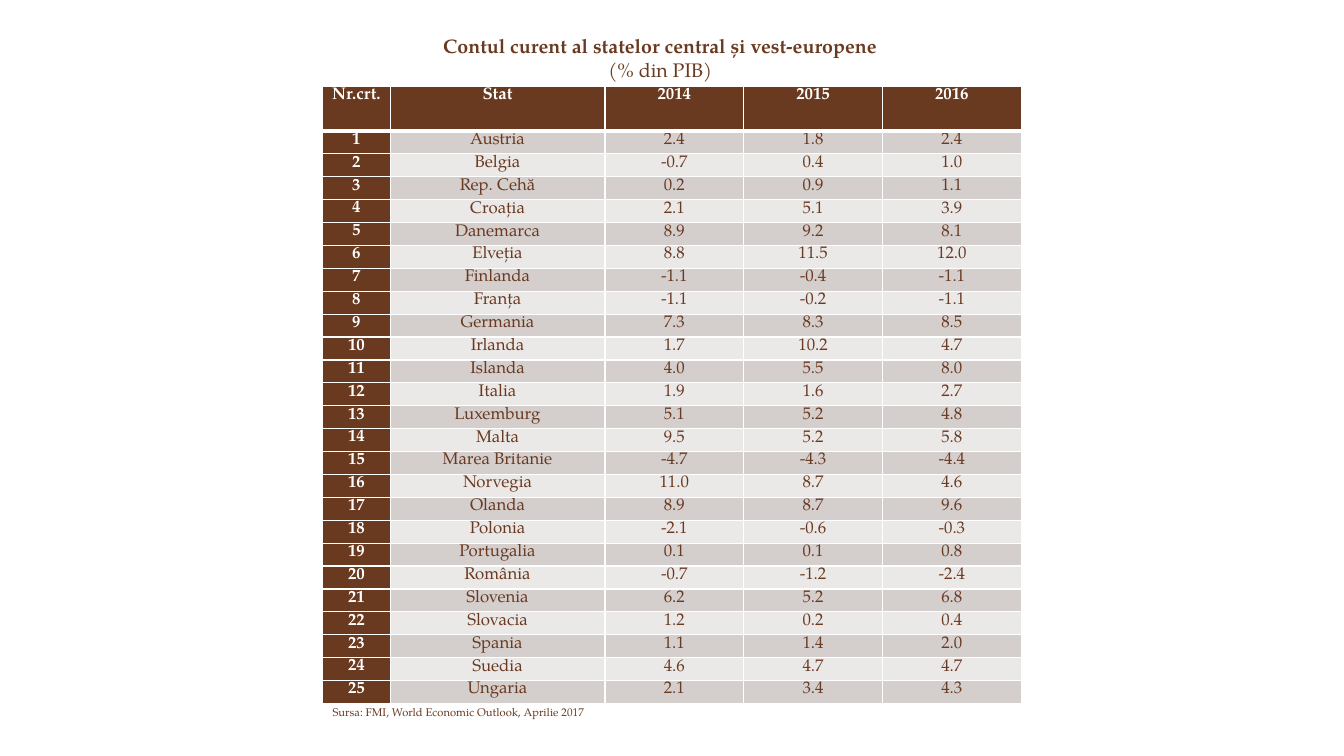
from typing import NamedTuple

from lxml.etree import SubElement
from pptx import Presentation
from pptx.dml.color import RGBColor
from pptx.enum.text import MSO_ANCHOR, MSO_AUTO_SIZE, PP_ALIGN
from pptx.oxml.ns import qn
from pptx.util import Inches, Pt

FONT = "TeX Gyre Pagella"
COLORS = {"brown": "6A3A20", "white": "FFFFFF", "dark_band": "D4CECD", "light_band": "EBE8E8"}
HEADERS = ("Nr.crt.", "Stat", "2014", "2015", "2016")
TABLE_LEFT, TABLE_TOP, TABLE_WIDTH, TABLE_HEIGHT = 3.2, 0.86, 6.93, 6.12
NUMBER_WIDTH, STATE_WIDTH = 0.67, 2.13
HEADER_HEIGHT = 0.44


class State(NamedTuple):
    name: str
    balances: tuple[float, float, float]


STATES = [
    State("Austria", (2.4, 1.8, 2.4)),
    State("Belgia", (-0.7, 0.4, 1.0)),
    State("Rep. Cehă", (0.2, 0.9, 1.1)),
    State("Croația", (2.1, 5.1, 3.9)),
    State("Danemarca", (8.9, 9.2, 8.1)),
    State("Elveția", (8.8, 11.5, 12.0)),
    State("Finlanda", (-1.1, -0.4, -1.1)),
    State("Franța", (-1.1, -0.2, -1.1)),
    State("Germania", (7.3, 8.3, 8.5)),
    State("Irlanda", (1.7, 10.2, 4.7)),
    State("Islanda", (4.0, 5.5, 8.0)),
    State("Italia", (1.9, 1.6, 2.7)),
    State("Luxemburg", (5.1, 5.2, 4.8)),
    State("Malta", (9.5, 5.2, 5.8)),
    State("Marea Britanie", (-4.7, -4.3, -4.4)),
    State("Norvegia", (11.0, 8.7, 4.6)),
    State("Olanda", (8.9, 8.7, 9.6)),
    State("Polonia", (-2.1, -0.6, -0.3)),
    State("Portugalia", (0.1, 0.1, 0.8)),
    State("România", (-0.7, -1.2, -2.4)),
    State("Slovenia", (6.2, 5.2, 6.8)),
    State("Slovacia", (1.2, 0.2, 0.4)),
    State("Spania", (1.1, 1.4, 2.0)),
    State("Suedia", (4.6, 4.7, 4.7)),
    State("Ungaria", (2.1, 3.4, 4.3)),
]


def write(p, text: str, *, size: int, color: str = "brown", bold: bool = False,
          align: PP_ALIGN = PP_ALIGN.CENTER, spacing: float = 1.0) -> None:
    p.alignment = align
    p.line_spacing = spacing
    r = p.add_run()
    r.text = text
    r.font.name = FONT
    r.font.size = Pt(size)
    r.font.bold = bold
    r.font.color.rgb = RGBColor.from_string(COLORS[color])


def add_borders(cell, row: int) -> None:
    """Draw white cell edges, thicker between the header and the first state."""
    widths = {"L": 1, "R": 1, "T": 3 if row == 1 else 1, "B": 3 if row == 0 else 1}
    for side, width in widths.items():
        ln = SubElement(cell._tc.get_or_add_tcPr(), qn(f"a:ln{side}"), w=str(Pt(width)))
        SubElement(SubElement(ln, qn("a:solidFill")), qn("a:srgbClr"), val=COLORS["white"])


def fill_cell(cell, text: str, row: int, column: int) -> None:
    heading = row == 0 or column == 0
    cell.margin_left = cell.margin_right = Inches(0.06)
    cell.margin_top = cell.margin_bottom = 0
    add_borders(cell, row)
    fill = "brown" if heading else "dark_band" if row % 2 else "light_band"
    cell.fill.solid()
    cell.fill.fore_color.rgb = RGBColor.from_string(COLORS[fill])
    write(cell.text_frame.paragraphs[0], text, size=12, bold=heading,
          color="white" if heading else "brown", spacing=1.07)


def add_balance_table(slide) -> None:
    rows = [HEADERS]
    for number, state in enumerate(STATES, 1):
        rows.append((str(number), state.name, *(f"{value:.1f}" for value in state.balances)))
    table = slide.shapes.add_table(
        len(rows), len(HEADERS), Inches(TABLE_LEFT), Inches(TABLE_TOP),
        Inches(TABLE_WIDTH), Inches(TABLE_HEIGHT)).table
    year_width = (TABLE_WIDTH - NUMBER_WIDTH - STATE_WIDTH) / 3
    for column, width in zip(table.columns, [NUMBER_WIDTH, STATE_WIDTH] + [year_width] * 3):
        column.width = Inches(width)
    state_height = (TABLE_HEIGHT - HEADER_HEIGHT) / len(STATES)
    for i, texts in enumerate(rows):
        table.rows[i].height = Inches(state_height if i else HEADER_HEIGHT)
        for j, text in enumerate(texts):
            fill_cell(table.cell(i, j), text, i, j)


def add_title(slide) -> None:
    title = slide.shapes.title
    title.left, title.top = Inches(2.81), Inches(0.29)
    title.width, title.height = Inches(7.48), Inches(0.57)
    tf = title.text_frame
    tf.word_wrap = True
    tf.auto_size = MSO_AUTO_SIZE.SHAPE_TO_FIT_TEXT
    tf.vertical_anchor = MSO_ANCHOR.TOP
    write(tf.paragraphs[0], "Contul curent al statelor central și vest-europene", size=14, bold=True)
    write(tf.add_paragraph(), "(% din PIB)", size=14)


def add_source_note(slide) -> None:
    sp = slide.shapes.add_textbox(Inches(3.2), Inches(6.95), Inches(2.76), Inches(0.24))
    tf = sp.text_frame
    tf.word_wrap = True
    tf.auto_size = MSO_AUTO_SIZE.SHAPE_TO_FIT_TEXT
    write(tf.paragraphs[0], "Sursa: FMI, World Economic Outlook, Aprilie 2017",
          size=8, align=PP_ALIGN.LEFT)


def main() -> None:
    prs = Presentation()
    prs.slide_width, prs.slide_height = Inches(13.33), Inches(7.5)
    slide = prs.slides.add_slide(prs.slide_layouts.get_by_name("Title Only"))
    add_title(slide)
    add_balance_table(slide)
    add_source_note(slide)
    prs.save("out.pptx")


if __name__ == "__main__":
    main()
